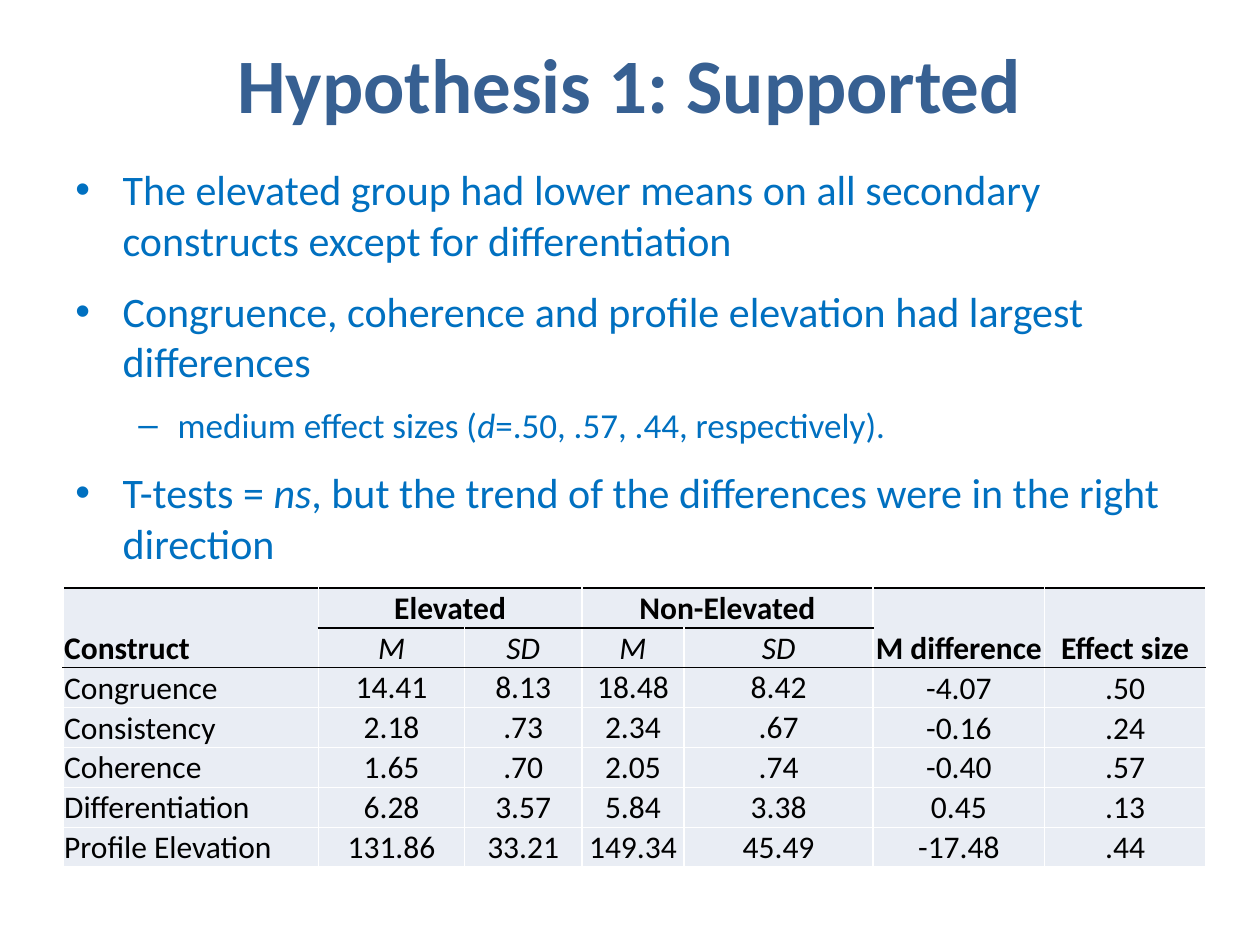
from lxml import etree
from pptx import Presentation
from pptx.dml.color import RGBColor
from pptx.enum.text import MSO_ANCHOR as Anchor, PP_ALIGN as Align
from pptx.oxml.ns import qn
from pptx.util import Pt

FONT = "Calibri"
NAVY = RGBColor(0x37, 0x60, 0x92)
BLUE = RGBColor(0x00, 0x70, 0xC0)
BLACK = RGBColor(0, 0, 0)
WHITE = RGBColor(0xFF, 0xFF, 0xFF)
PALE = RGBColor(0xE9, 0xED, 0xF4)


def add_run(paragraph, text, size, color, bold=False, italic=False):
    run = paragraph.add_run()
    run.text = text
    font = run.font
    font.name, font.size, font.bold, font.italic = FONT, Pt(size), bold, italic
    font.color.rgb = color


def set_borders(cell, colors):
    """Draw 1 pt borders; colors are in the order left, right, top, bottom."""
    properties = cell._tc.get_or_add_tcPr()
    for index, (side, color) in enumerate(zip("LRTB", colors)):
        line = etree.Element(qn(f"a:ln{side}"), w=str(Pt(1)))
        fill = etree.SubElement(line, qn("a:solidFill"))
        etree.SubElement(fill, qn("a:srgbClr"), val=str(color))
        properties.insert(index, line)


presentation = Presentation()
presentation.slide_width, presentation.slide_height = Pt(720), Pt(540)
slide = presentation.slides.add_slide(presentation.slide_layouts[6])

# Title
title = slide.shapes.add_textbox(Pt(36), Pt(2), Pt(648), Pt(90)).text_frame
title.word_wrap = True
title.vertical_anchor = Anchor.MIDDLE
title.paragraphs[0].alignment = Align.CENTER
add_run(title.paragraphs[0], "Hypothesis 1: Supported", 44, NAVY, bold=True)

# Findings: level and (text, italic) runs
findings = [
    (0, [("The elevated group had lower means on all secondary constructs "
          "except for differentiation", False)]),
    (0, [("Congruence, coherence and profile elevation had largest differences", False)]),
    (1, [("medium effect sizes (", False), ("d", True),
         ("=.50, .57, .44, respectively).", False)]),
    (0, [("T-tests = ", False), ("ns", True),
         (", but the trend of the differences were in the right direction", False)]),
]
# Left margin, indent, bullet and text size of each level
levels = [(27, -27, "•", 24), (58.5, -22.5, "–", 20)]

body = slide.shapes.add_textbox(Pt(36), Pt(90), Pt(648), Pt(356)).text_frame
body.word_wrap = True
for index, (level, runs) in enumerate(findings):
    margin, indent, bullet, size = levels[level]
    paragraph = body.add_paragraph() if index else body.paragraphs[0]
    paragraph.level = level
    if index:
        paragraph.space_before = Pt(size / 2)
    properties = paragraph._p.get_or_add_pPr()
    properties.set("marL", str(Pt(margin)))
    properties.set("indent", str(Pt(indent)))
    etree.SubElement(properties, qn("a:buFont"), typeface="Arial")
    etree.SubElement(properties, qn("a:buChar"), char=bullet)
    for text, italic in runs:
        add_run(paragraph, text, size, BLUE, italic=italic)

# Table of group means
rows = [
    ["Construct", "Elevated", "", "Non-Elevated", "", "M difference", "Effect size"],
    ["", "M", "SD", "M", "SD", "", ""],
    ["Congruence", "14.41", "8.13", "18.48", "8.42", "-4.07", ".50"],
    ["Consistency", "2.18", ".73", "2.34", ".67", "-0.16", ".24"],
    ["Coherence", "1.65", ".70", "2.05", ".74", "-0.40", ".57"],
    ["Differentiation", "6.28", "3.57", "5.84", "3.38", "0.45", ".13"],
    ["Profile Elevation", "131.86", "33.21", "149.34", "45.49", "-17.48", ".44"],
]
column_widths = [146, 83.5, 67, 58.5, 108, 98, 92]
row_height = 22.8

table = slide.shapes.add_table(
    len(rows), len(column_widths), Pt(36), Pt(336),
    Pt(sum(column_widths)), Pt(row_height * len(rows))).table
table.first_row = table.horz_banding = False
for column, width in zip(table.columns, column_widths):
    column.width = Pt(width)

for row_index, row in enumerate(rows):
    table.rows[row_index].height = Pt(row_height)
    for column_index, text in enumerate(row):
        cell = table.cell(row_index, column_index)
        cell.margin_left = cell.margin_right = cell.margin_top = Pt(0.7)
        cell.margin_bottom = 0
        is_group_value = row_index >= 2 and 1 <= column_index <= 4
        cell.vertical_anchor = Anchor.TOP if is_group_value else Anchor.BOTTOM
        cell.fill.solid()
        cell.fill.fore_color.rgb = PALE
        set_borders(cell, [WHITE, WHITE,
                           BLACK if row_index <= 2 else WHITE,
                           BLACK if row_index <= 1 else WHITE])
        paragraph = cell.text_frame.paragraphs[0]
        paragraph.alignment = Align.CENTER if column_index else Align.LEFT
        paragraph.font.size = Pt(18)
        if text:
            add_run(paragraph, text, 18, BLACK,
                    bold=row_index == 0, italic=row_index == 1)

for column_index in (0, 5, 6):
    table.cell(0, column_index).merge(table.cell(1, column_index))
for column_index in (1, 3):
    table.cell(0, column_index).merge(table.cell(0, column_index + 1))

presentation.save("out.pptx")
